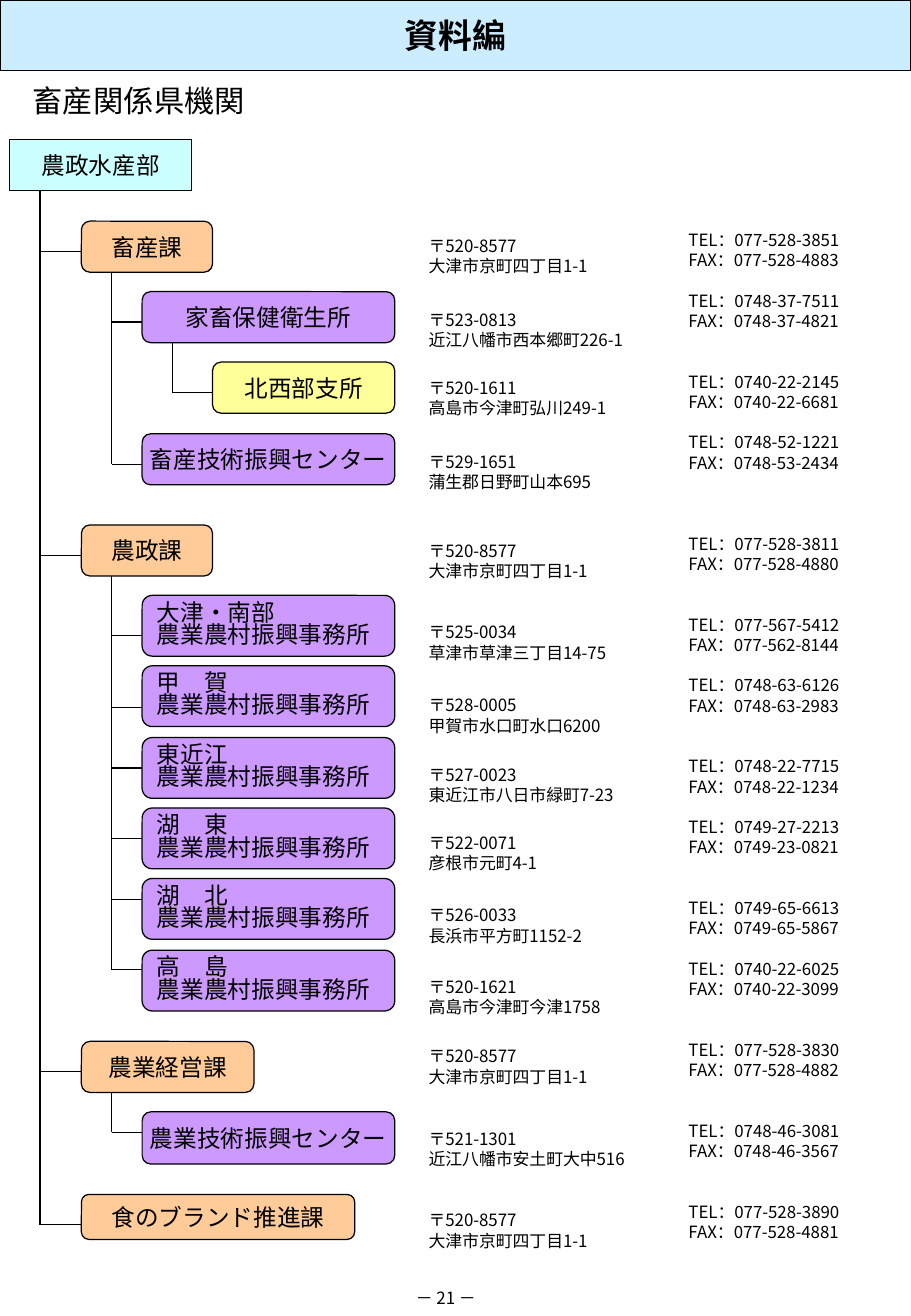
import collections
import pptx
import pptx.dml.color
import pptx.enum.shapes
import pptx.enum.text
import pptx.oxml.ns
import pptx.util
from lxml import etree

Inches, Pt = pptx.util.Inches, pptx.util.Pt
SHAPES = pptx.enum.shapes.MSO_SHAPE
ALIGN = pptx.enum.text.PP_ALIGN
MIDDLE = pptx.enum.text.MSO_ANCHOR.MIDDLE
qn = pptx.oxml.ns.qn

BANNER = "資料編"
HEADING = "畜産関係県機関"
PAGE_NUMBER = "－ 21 －"
OFFICE = "農業農村振興事務所"
GOTHIC = "Noto Sans CJK JP"
BLACK = "000000"

Unit = collections.namedtuple("Unit", "level name top width height branch address address_top phone phone_row")
UNITS = [Unit(*row) for row in [
    (0, ["農政水産部"], 1.15, 1.5, 0.42, None, None, None, None, None),
    (1, ["畜産課"], 1.82, 1.08, 0.42, 2.07,
     ["〒520-8577", "大津市京町四丁目1-1"], 1.89, ["077-528-3851", "077-528-4883"], 0),
    (2, ["家畜保健衛生所"], 2.4, 2.08, 0.42, 2.65,
     ["〒523-0813", "近江八幡市西本郷町226-1"], 2.5, ["0748-37-7511", "0748-37-4821"], 3),
    (3, ["北西部支所"], 2.98, 1.5, 0.42, 3.23,
     ["〒520-1611", "高島市今津町弘川249-1"], 3.06, ["0740-22-2145", "0740-22-6681"], 7),
    (2, ["畜産技術振興センター"], 3.57, 2.08, 0.42, 3.82,
     ["〒529-1651", "蒲生郡日野町山本695"], 3.67, ["0748-52-1221", "0748-53-2434"], 10),
    (1, ["農政課"], 4.32, 1.08, 0.42, 4.57,
     ["〒520-8577", "大津市京町四丁目1-1"], 4.4, ["077-528-3811", "077-528-4880"], 15),
    (2, ["大津・南部", OFFICE], 4.9, 2.08, 0.5, 5.23,
     ["〒525-0034", "草津市草津三丁目14-75"], 5.07, ["077-567-5412", "077-562-8144"], 19),
    (2, ["甲　賀", OFFICE], 5.48, 2.08, 0.5, 5.82,
     ["〒528-0005", "甲賀市水口町水口6200"], 5.67, ["0748-63-6126", "0748-63-2983"], 22),
    (2, ["東近江", OFFICE], 6.07, 2.08, 0.5, 6.32,
     ["〒527-0023", "東近江市八日市緑町7-23"], 6.24, ["0748-22-7715", "0748-22-1234"], 26),
    (2, ["湖　東", OFFICE], 6.65, 2.08, 0.5, 6.9,
     ["〒522-0071", "彦根市元町4-1"], 6.8, ["0749-27-2213", "0749-23-0821"], 29),
    (2, ["湖　北", OFFICE], 7.23, 2.08, 0.5, 7.4,
     ["〒526-0033", "長浜市平方町1152-2"], 7.4, ["0749-65-6613", "0749-65-5867"], 33),
    (2, ["高　島", OFFICE], 7.82, 2.08, 0.5, 7.98,
     ["〒520-1621", "高島市今津町今津1758"], 7.99, ["0740-22-6025", "0740-22-3099"], 36),
    (1, ["農業経営課"], 8.57, 1.42, 0.42, 8.82,
     ["〒520-8577", "大津市京町四丁目1-1"], 8.56, ["077-528-3830", "077-528-4882"], 40),
    (2, ["農業技術振興センター"], 9.15, 2.08, 0.43, 9.32,
     ["〒521-1301", "近江八幡市安土町大中516"], 9.24, ["0748-46-3081", "0748-46-3567"], 44),
    (1, ["食のブランド推進課"], 9.83, 2.25, 0.37, 10.08,
     ["〒520-8577", "大津市京町四丁目1-1"], 9.91, ["077-528-3890", "077-528-4881"], 48),
]]

LEVEL_LEFT = [0.08, 0.67, 1.17, 1.75]
LEVEL_FILL = ["CCFFFF", "FFCC99", "CC99FF", "FFFF99"]
TRUNK_INDENT = 0.25
ADDRESS_LEFT, PHONE_LEFT = 3.43, 5.57
PHONE_TOP, PHONE_PITCH = 1.84, 1 / 6

deck = pptx.Presentation()
deck.slide_width, deck.slide_height = Inches(7.5), Inches(10.83)
slide = deck.slides.add_slide(deck.slide_layouts[6])


def rgb(code):
    return pptx.dml.color.RGBColor.from_string(code)


def write(shape, lines, size, align=ALIGN.LEFT, spacing=None, wrap=True, bold=False, latin=GOTHIC):
    shape.text_frame.word_wrap = wrap
    for number, line in enumerate(lines):
        paragraph = shape.text_frame.paragraphs[0] if number == 0 else shape.text_frame.add_paragraph()
        paragraph.alignment = align
        if spacing:
            paragraph.line_spacing = Pt(spacing)
        run = paragraph.add_run()
        run.text = line
        for key, value in {"size": Pt(size), "bold": bold, "name": latin}.items():
            setattr(run.font, key, value)
        run.font.color.rgb = rgb(BLACK)
        east_asian = etree.SubElement(run.font._element, qn("a:ea"))
        east_asian.set("typeface", GOTHIC)


def label(left, top, width, height, lines, size, **text_format):
    box = slide.shapes.add_textbox(*map(Inches, (left, top, width, height)))
    write(box, lines, size, **text_format)


def block(kind, left, top, width, height, fill, lines, size, **text_format):
    """Outlined, filled shape with vertically centred text."""
    shape = slide.shapes.add_shape(kind, *map(Inches, (left, top, width, height)))
    shape.shadow.inherit = False
    shape.fill.solid()
    shape.fill.fore_color.rgb = rgb(fill)
    shape.line.color.rgb = rgb(BLACK)
    shape.line.width = Pt(0.75)
    shape.text_frame.vertical_anchor = MIDDLE
    write(shape, lines, size, **text_format)


def rule(x1, y1, x2, y2):
    line = slide.shapes.add_connector(
        pptx.enum.shapes.MSO_CONNECTOR.STRAIGHT, *map(Inches, (x1, y1, x2, y2)))
    line.line.color.rgb = rgb(BLACK)
    line.line.width = Pt(0.75)
    etree.SubElement(line._element.spPr, qn("a:effectLst"))


block(SHAPES.RECTANGLE, 0, 0, 7.5, 0.58, "CCECFF", [BANNER], 20, align=ALIGN.CENTER, bold=True)
label(0.17, 0.63, 2.2, 0.4, [HEADING], 18, latin="Arial")

latest = {}
trunk_end = {}
for unit in UNITS:
    left = LEVEL_LEFT[unit.level]
    two_lines = len(unit.name) > 1
    block(SHAPES.ROUNDED_RECTANGLE if unit.level else SHAPES.RECTANGLE,
          left, unit.top, unit.width, unit.height, LEVEL_FILL[unit.level], unit.name, 14,
          align=ALIGN.LEFT if two_lines else ALIGN.CENTER,
          spacing=13.3 if two_lines else None, wrap=two_lines)
    latest[unit.level] = unit
    if unit.level == 0:
        continue
    parent = latest[unit.level - 1]
    trunk_x = LEVEL_LEFT[parent.level] + TRUNK_INDENT
    trunk_end[trunk_x, parent.top + parent.height] = unit.branch
    rule(trunk_x, unit.branch, left, unit.branch)
    label(ADDRESS_LEFT, unit.address_top, 2.12, 0.44, unit.address, 10, spacing=12)
    numbers = [f"{kind}：{number}" for kind, number in zip(("TEL", "FAX"), unit.phone)]
    label(PHONE_LEFT, PHONE_TOP + unit.phone_row * PHONE_PITCH, 1.86, 0.44, numbers, 10, spacing=12)

for (trunk_x, start), end in trunk_end.items():
    rule(trunk_x, start, trunk_x, end)

label(3.17, 10.55, 1, 0.28, [PAGE_NUMBER], 10, align=ALIGN.CENTER)

deck.save("out.pptx")
